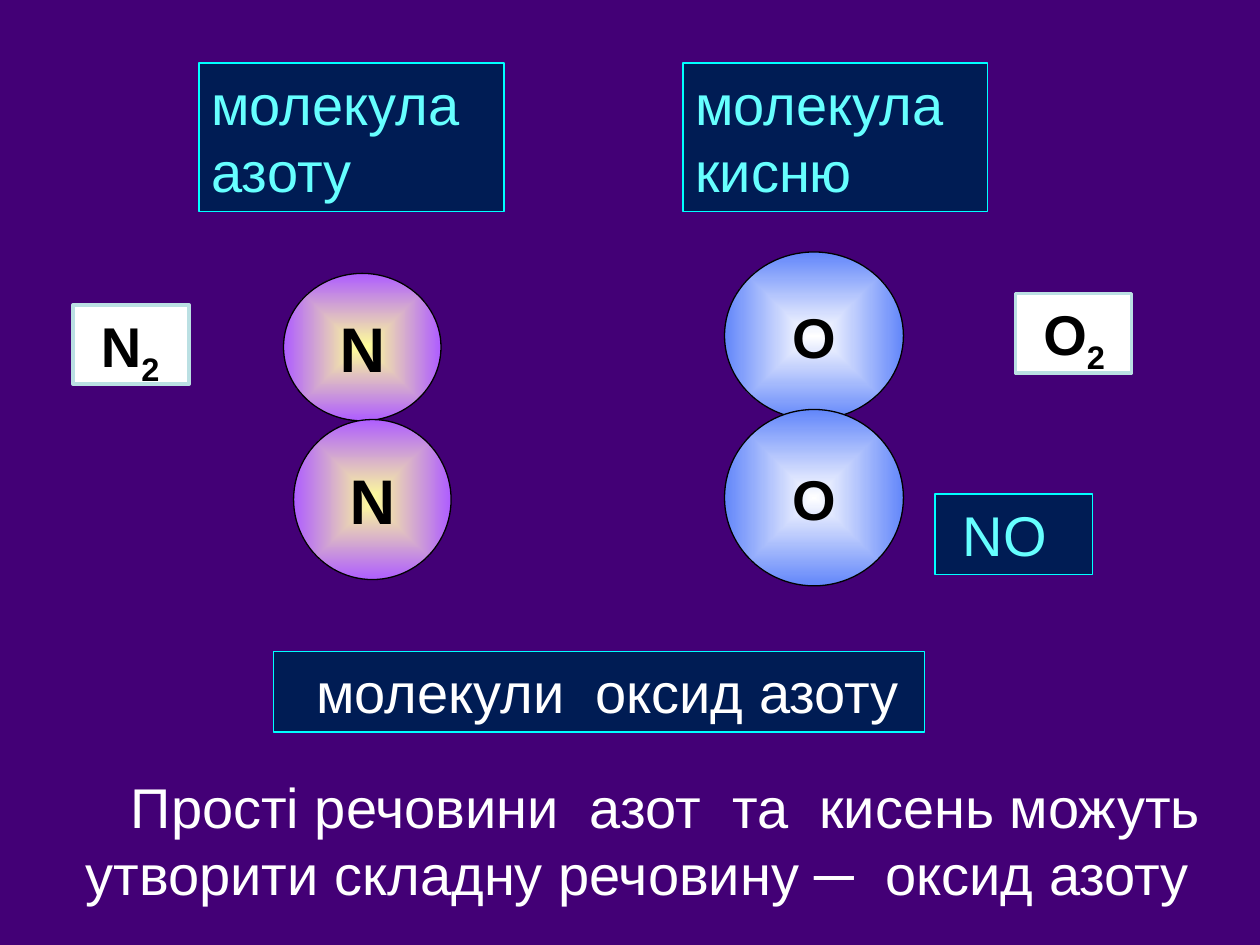
from lxml import etree
from pptx import Presentation
from pptx.dml.color import RGBColor
from pptx.enum.shapes import MSO_SHAPE
from pptx.enum.text import MSO_ANCHOR, PP_ALIGN
from pptx.oxml.ns import qn
from pptx.util import Inches, Pt

OVAL, RECTANGLE = MSO_SHAPE.OVAL, MSO_SHAPE.RECTANGLE
TOP, MIDDLE = MSO_ANCHOR.TOP, MSO_ANCHOR.MIDDLE
LEFT, CENTER = PP_ALIGN.LEFT, PP_ALIGN.CENTER

COLORS = {
    "background": "430076",
    "panel": "001C54",
    "panel_line": "00FFFF",
    "cyan": "66FFFF",
    "white": "FFFFFF",
    "black": "000000",
    "formula_line": "BBE0E3",
    "nitrogen_core": "FFFF99",
    "nitrogen_rim": "AE5DFF",
    "oxygen_core": "FFFFFF",
    "oxygen_rim": "6286FA",
}
SPACE = 0.12


def rgb(name):
    """Return the named colour."""
    return RGBColor.from_string(COLORS[name])


def style_text(paragraph, color, size=32, bold=False, align=LEFT):
    """Set the font and alignment of a paragraph."""
    paragraph.alignment = align
    font = paragraph.font
    font.name, font.size, font.bold = "Arial", Pt(size), bold
    font.color.rgb = rgb(color)


def add_outlined(slide, kind, box, line, width=0.75):
    """Add a shadowless preset shape with an outline."""
    shape = slide.shapes.add_shape(kind, *map(Inches, box))
    shape.shadow.inherit = False
    shape.line.color.rgb = rgb(line)
    shape.line.width = Pt(width)
    return shape


def fill_from_center(shape, core, rim):
    """Fill a shape with a gradient that runs from its centre to its rim."""
    shape.fill.gradient()
    for stop, color, position in zip(shape.fill.gradient_stops, (core, rim), (0, 1)):
        stop.color.rgb = rgb(color)
        stop.position = position
    gradient = shape.fill._xPr.find(qn("a:gradFill"))
    gradient.remove(gradient.find(qn("a:lin")))
    spread = etree.SubElement(gradient, qn("a:path"))
    spread.set("path", "shape")
    center = etree.SubElement(spread, qn("a:fillToRect"))
    for side in "ltrb":
        center.set(side, "50000")


def add_atom(slide, box, symbol, element, size):
    """Add one atom with its chemical symbol."""
    atom = add_outlined(slide, OVAL, box, "black")
    fill_from_center(atom, f"{element}_core", f"{element}_rim")
    frame = atom.text_frame
    frame.word_wrap = False
    frame.vertical_anchor = MIDDLE
    frame.text = symbol
    style_text(frame.paragraphs[0], "black", size, True, CENTER)


def add_molecule(slide, box, symbol, element, size, lower):
    """Add two stacked atoms, the lower one offset and sized by lower."""
    left, top, width, height = box
    shift, drop, lower_height = lower
    add_atom(slide, box, symbol, element, size)
    add_atom(slide, (left + shift, top + drop, width, lower_height), symbol, element, size)


def add_formula(slide, left, top, symbol):
    """Add a white box with a diatomic formula."""
    formula = add_outlined(slide, RECTANGLE, (left, top, 0.92, 0.63), "formula_line", 2)
    formula.fill.solid()
    formula.fill.fore_color.rgb = rgb("white")
    frame = formula.text_frame
    frame.word_wrap = True
    frame.vertical_anchor = TOP
    frame.margin_left = Inches(0.1 + SPACE)
    frame.margin_right = 0
    paragraph = frame.paragraphs[0]
    paragraph.add_run().text = symbol
    count = paragraph.add_run()
    count.text = "2"
    count._r.get_or_add_rPr().set("baseline", "-25000")
    style_text(paragraph, "black", bold=True)


def add_label(slide, box, text, color, spaces=0):
    """Add a dark blue label, its text inset by a number of spaces."""
    label = add_outlined(slide, RECTANGLE, box, "panel_line")
    label.fill.solid()
    label.fill.fore_color.rgb = rgb("panel")
    frame = label.text_frame
    frame.word_wrap = True
    frame.vertical_anchor = TOP
    frame.margin_left = Inches(0.1 + spaces * SPACE)
    frame.text = text
    style_text(frame.paragraphs[0], color)


def add_conclusion(slide, box, text):
    """Add the closing sentence with an indented first line."""
    frame = slide.shapes.add_textbox(*map(Inches, box)).text_frame
    frame.word_wrap = True
    frame.text = text
    paragraph = frame.paragraphs[0]
    style_text(paragraph, "white")
    paragraph._p.get_or_add_pPr().set("indent", str(Inches(3 * SPACE)))


def main():
    """Build and save the slide."""
    deck = Presentation()
    deck.slide_width, deck.slide_height = Inches(10), Inches(7.5)
    slide = deck.slides.add_slide(deck.slide_layouts[6])
    slide.background.fill.solid()
    slide.background.fill.fore_color.rgb = rgb("background")

    add_molecule(slide, (2.25, 2.17, 1.25, 1.17), "N", "nitrogen", 36, (0.08, 1.16, 1.27))
    add_molecule(slide, (5.75, 2, 1.42, 1.33), "O", "oxygen", 32, (0, 1.25, 1.4))
    add_formula(slide, 0.58, 2.42, "N")
    add_formula(slide, 8.06, 2.33, "O")
    add_label(slide, (7.42, 3.92, 1.25, 0.64), "NO", "cyan", 1)
    for left, gas in ((1.58, "азоту"), (5.42, "кисню")):
        add_label(slide, (left, 0.5, 2.42, 1.18), f"молекула {gas}", "cyan")
    add_label(slide, (2.17, 5.17, 5.17, 0.64), "молекули  оксид азоту", "white", 2)
    add_conclusion(
        slide,
        (0.58, 6.08, 9.08, 1.17),
        "Прості речовини  азот  та  кисень можуть "
        "утворити складну речовину ─  оксид азоту",
    )
    deck.save("out.pptx")


if __name__ == "__main__":
    main()
